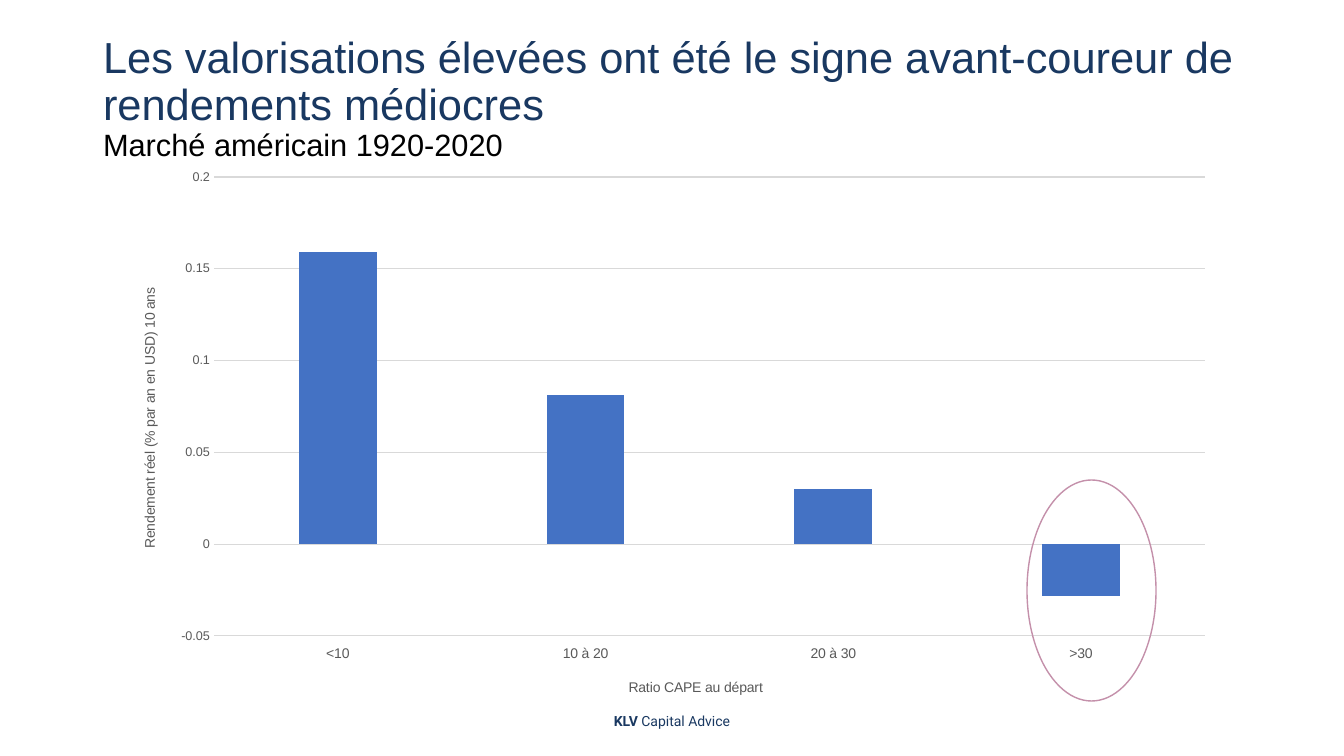
from lxml.etree import SubElement
from pptx import Presentation
from pptx.chart.data import CategoryChartData
from pptx.dml.color import RGBColor
from pptx.enum.chart import XL_CHART_TYPE, XL_TICK_LABEL_POSITION, XL_TICK_MARK
from pptx.enum.shapes import MSO_SHAPE
from pptx.enum.text import MSO_ANCHOR, MSO_AUTO_SIZE, PP_ALIGN
from pptx.oxml.ns import qn
from pptx.util import Pt

PX = 914400 / 100.8
NAVY, GREY, GRID = "193861", "595959", "D9D9D9"
CHART = (117, 159, 1111, 554)


def style(font, size, color, name="Arial", bold=False):
    values = {"size": Pt(size), "name": name, "bold": bold}
    for key, value in values.items():
        setattr(font, key, value)
    font.color.rgb = RGBColor.from_string(color)


def place(parent, left, top, width=None, height=None):
    """Fix a chart part at slide pixels; without a size only its corner is set."""
    layout = parent.get_or_add_layout() if hasattr(parent, "get_or_add_layout") else parent.find(qn("c:layout"))
    if layout is None:
        layout = parent.makeelement(qn("c:layout"))
        parent.insert(1 if parent.find(qn("c:tx")) is not None else 0, layout)
    manual = SubElement(layout, qn("c:manualLayout"))
    parts = {"xMode": "edge", "yMode": "edge",
             "x": (left - CHART[0]) / CHART[2], "y": (top - CHART[1]) / CHART[3]}
    if width:
        SubElement(manual, qn("c:layoutTarget")).set("val", "inner")
        parts.update(w=width / CHART[2], h=height / CHART[3])
    for tag, value in parts.items():
        SubElement(manual, qn(f"c:{tag}")).set("val", str(value))


prs = Presentation()
prs.slide_width, prs.slide_height = round(1344 * PX), round(756 * PX)
s = prs.slides.add_slide(prs.slide_layouts[5])

# Title and subtitle
title = s.shapes.title
title.left, title.top, title.width, title.height = [round(v * PX) for v in (93, 26, 1159, 147)]
tf = title.text_frame
tf.word_wrap, tf.auto_size, tf.vertical_anchor = True, MSO_AUTO_SIZE.NONE, MSO_ANCHOR.MIDDLE
tf.text = ("Les valorisations élevées ont été le signe avant-coureur de rendements médiocres\n"
           "Marché américain 1920-2020")
for p, size, color in zip(tf.paragraphs, (31, 22), (NAVY, "000000")):
    p.alignment, p.line_spacing, p.space_before = PP_ALIGN.LEFT, 0.9, Pt(0)
    style(p.runs[0].font, size, color)

# Footer
footer = s.shapes.add_textbox(*[round(v * PX) for v in (445, 701, 454, 40)])
tf = footer.text_frame
tf.word_wrap, tf.vertical_anchor = True, MSO_ANCHOR.MIDDLE
p = tf.paragraphs[0]
p.alignment = PP_ALIGN.CENTER
for text, bold in (("KLV ", True), ("Capital Advice", False)):
    r = p.add_run()
    r.text = text
    style(r.font, 10, NAVY, "Roboto", bold)

# Column chart
data = CategoryChartData()
data.categories = ["<10", "10 à 20", "20 à 30", ">30"]
data.add_series("Rendement réel", (0.159, 0.081, 0.03, -0.028))
chart = s.shapes.add_chart(XL_CHART_TYPE.COLUMN_CLUSTERED,
                           *[round(v * PX) for v in CHART], data).chart
chart.has_legend = chart.has_title = False
style(chart.font, 10, "000000")
plot = chart.plots[0]
plot.gap_width, plot.overlap, plot.vary_by_categories = 219, -27, False
bars = plot.series[0]
bars.invert_if_negative = False
bars.format.fill.solid()
bars.format.fill.fore_color.rgb = RGBColor.from_string("4472C4")
place(chart.plots[0]._element.getparent(), 214, 177, 991, 459)

# Axes
cat, val = chart.category_axis, chart.value_axis
for axis, size, text, left, top in (
        (cat, 10, "Ratio CAPE au départ", 626, 676),
        (val, 9, "Rendement réel (% par an en USD) 10 ans", 138, 285)):
    axis.major_tick_mark = axis.minor_tick_mark = XL_TICK_MARK.NONE
    style(axis.tick_labels.font, size, GREY)
    tf = axis.axis_title.text_frame
    tf.text = text
    style(tf.paragraphs[0].runs[0].font, 10, GREY)
    place(axis.axis_title._element, left, top)
cat.tick_label_position = XL_TICK_LABEL_POSITION.LOW
val.minimum_scale, val.maximum_scale, val.major_unit = -0.05, 0.2, 0.05
val.tick_labels.number_format, val.tick_labels.number_format_is_linked = "General", False
val.format.line.fill.background()
for line in (cat.format.line, val.major_gridlines.format.line):
    line.width = Pt(0.75)
    line.color.rgb = RGBColor.from_string(GRID)

# Ring around the negative return
ring = s.shapes.add_shape(MSO_SHAPE.OVAL, *[round(v * PX) for v in (1027, 480, 129, 221)])
ring.shadow.inherit = False
ring.fill.background()
ring.line.width = Pt(1)
ring.line.color.rgb = RGBColor.from_string("C490AA")

prs.save("out.pptx")
